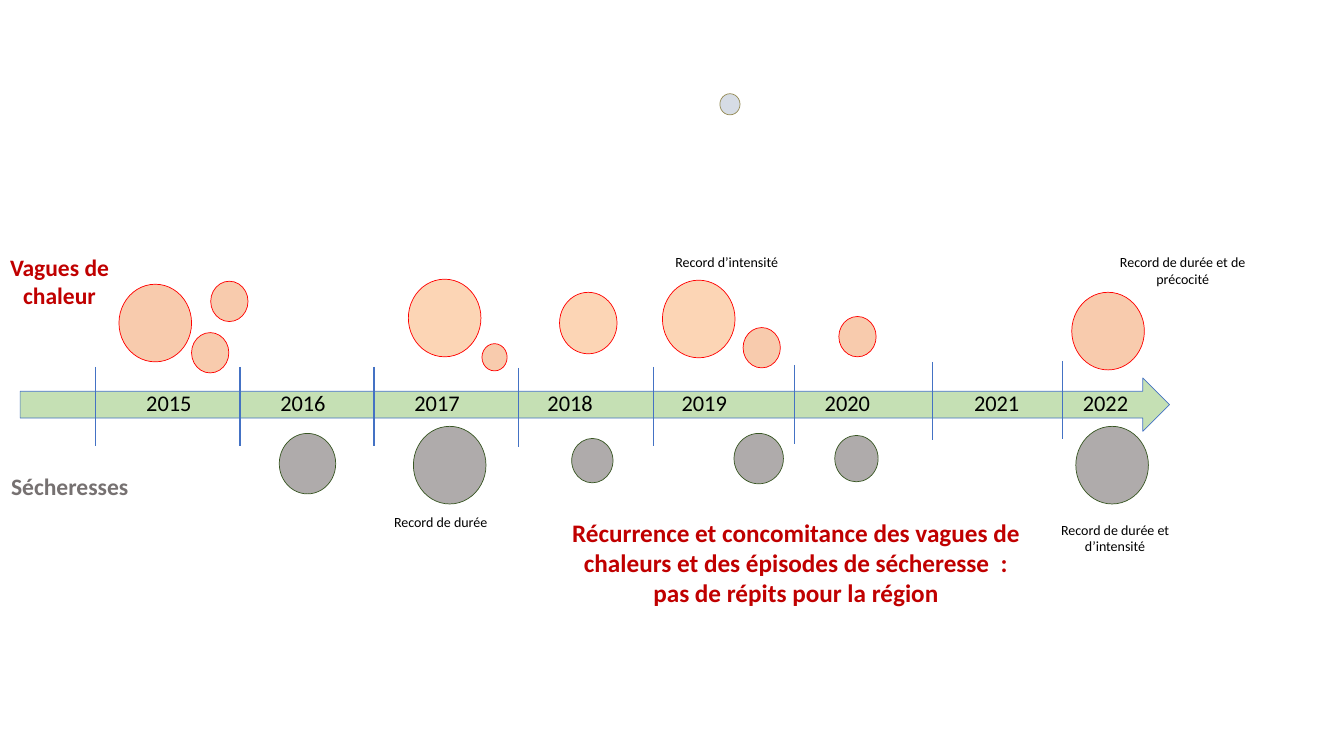
from lxml import etree
from pptx import Presentation
from pptx.dml.color import RGBColor
from pptx.enum.shapes import MSO_CONNECTOR, MSO_SHAPE
from pptx.enum.text import PP_ALIGN
from pptx.oxml.ns import qn
from pptx.util import Inches, Pt

OVAL, ARROW = MSO_SHAPE.OVAL, MSO_SHAPE.RIGHT_ARROW
STRAIGHT = MSO_CONNECTOR.STRAIGHT
LEFT, CENTER = PP_ALIGN.LEFT, PP_ALIGN.CENTER

BLACK = RGBColor(0x00, 0x00, 0x00)
DARK_RED = RGBColor(0xC0, 0x00, 0x00)
RED = RGBColor(0xFF, 0x00, 0x00)
BLUE = RGBColor(0x44, 0x72, 0xC4)
PALE_GREEN = RGBColor(0xC5, 0xE0, 0xB4)
DARK_GREEN = RGBColor(0x38, 0x56, 0x23)
SALMON = RGBColor(0xF8, 0xCB, 0xAD)
PEACH = RGBColor(0xFC, 0xD5, 0xB5)
GREY = RGBColor(0xAF, 0xAB, 0xAB)
TEXT_GREY = RGBColor(0x76, 0x71, 0x71)
PALE_BLUE = RGBColor(0xD6, 0xDC, 0xE5)
OLIVE = RGBColor(0x94, 0x8A, 0x54)

WIDE_MARGINS = (0.12, 0.06)
NORMAL_MARGINS = (0.1, 0.05)
HEADING = {"size": Pt(16.8), "bold": True}
YEAR = {"size": Pt(16)}
NOTE = {"size": Pt(10)}
MESSAGE = {"size": Pt(18), "bold": True}

# Left, top, width, height
LARGE, SMALL = (0.72, 0.77), (0.37, 0.4)
HEAT_WAVES = [
    (1.18, 2.82, *LARGE, SALMON),
    (1.9, 3.3, *SMALL, SALMON),
    (2.09, 2.79, *SMALL, SALMON),
    (4.05, 2.77, *LARGE, PEACH),
    (4.78, 3.41, 0.25, 0.27, SALMON),
    (5.55, 2.9, 0.57, 0.61, PEACH),
    (6.57, 2.78, *LARGE, PEACH),
    (7.37, 3.25, *SMALL, SALMON),
    (8.32, 3.14, *SMALL, SALMON),
    (10.63, 2.9, *LARGE, SALMON),
]
DROUGHTS = [
    (2.77, 4.3, 0.56, 0.6),
    (4.1, 4.23, *LARGE),
    (5.67, 4.35, 0.41, 0.44),
    (7.28, 4.3, 0.49, 0.5),
    (8.28, 4.32, 0.43, 0.46),
    (10.67, 4.23, *LARGE),
]
# Left and top of each tick
TICKS = [(0.95, 3.64), (2.38, 3.64), (3.71, 3.64), (5.14, 3.65),
         (6.48, 3.64), (7.88, 3.62), (9.25, 3.59), (10.54, 3.58)]
TICK_HEIGHT = 0.78
YEAR_LEFTS = [1.33, 2.66, 3.99, 5.31, 6.64, 8.06, 9.54, 10.62]
FIRST_YEAR = 2015
NOTES = [
    ("Record de durée", (3.81, 5.05, 1.15, 0.27), False),
    ("Record d’intensité", (6.6, 2.47, 1.24, 0.27), False),
    ("Record de durée et de précocité", (10.93, 2.47, 1.6, 0.44), True),
    ("Record de durée et d’intensité", (10.26, 5.12, 1.6, 0.44), True),
]


def add_outlined_shape(slide, kind, place, fill, line):
    shape = slide.shapes.add_shape(kind, *map(Inches, place))
    shape.shadow.inherit = False
    shape.fill.solid()
    shape.fill.fore_color.rgb = fill
    shape.line.color.rgb = line
    shape.line.width = Pt(0.5)


def add_tick(slide, left, top):
    tick = slide.shapes.add_connector(
        STRAIGHT, Inches(left), Inches(top), Inches(left), Inches(top + TICK_HEIGHT))
    tick.line.color.rgb = BLUE
    tick.line.width = Pt(1)
    etree.SubElement(tick._element.spPr, qn("a:effectLst"))


def add_text(slide, lines, place, font_format, color=BLACK, wrap=True,
             margins=NORMAL_MARGINS):
    box = slide.shapes.add_textbox(*map(Inches, place))
    frame = box.text_frame
    frame.word_wrap = wrap
    frame.margin_left = frame.margin_right = Inches(margins[0])
    frame.margin_top = frame.margin_bottom = Inches(margins[1])
    frame.text = "\n".join(lines)
    for para in frame.paragraphs:
        para.alignment = CENTER if wrap else LEFT
        para.font.name = "Calibri"
        para.font.color.rgb = color
        for name, value in font_format.items():
            setattr(para.font, name, value)


def main():
    deck = Presentation()
    deck.slide_width, deck.slide_height = Inches(13.33), Inches(7.5)
    slide = deck.slides.add_slide(deck.slide_layouts[6])

    # Time axis with its years
    add_outlined_shape(slide, OVAL, (7.14, 0.93, 0.2, 0.21), PALE_BLUE, OLIVE)
    add_outlined_shape(slide, ARROW, (0.2, 3.75, 11.4, 0.53), PALE_GREEN, BLUE)
    for left, top in TICKS:
        add_tick(slide, left, top)
    for year, left in enumerate(YEAR_LEFTS, FIRST_YEAR):
        add_text(slide, [str(year)], (left, 3.8, 0.72, 0.45), YEAR,
                 wrap=False, margins=WIDE_MARGINS)

    # Events above and below the axis
    for *place, fill in HEAT_WAVES:
        add_outlined_shape(slide, OVAL, place, fill, RED)
    for place in DROUGHTS:
        add_outlined_shape(slide, OVAL, place, GREY, DARK_GREEN)

    # Row headings
    add_text(slide, ["Vagues de chaleur"], (-0.4, 2.45, 1.98, 0.71), HEADING,
             DARK_RED, margins=WIDE_MARGINS)
    add_text(slide, ["Sécheresses"], (-0.01, 4.62, 1.5, 0.43), HEADING,
             TEXT_GREY, wrap=False, margins=WIDE_MARGINS)

    # Records and key message
    for words, place, wrap in NOTES:
        add_text(slide, [words], place, NOTE, wrap=wrap)
    add_text(slide,
             ["Récurrence et concomitance des vagues de chaleurs et des "
              "épisodes de sécheresse  :",
              "pas de répits pour la région"],
             (5.22, 5.08, 5.35, 1.01), MESSAGE, DARK_RED)

    deck.save("out.pptx")


if __name__ == "__main__":
    main()
